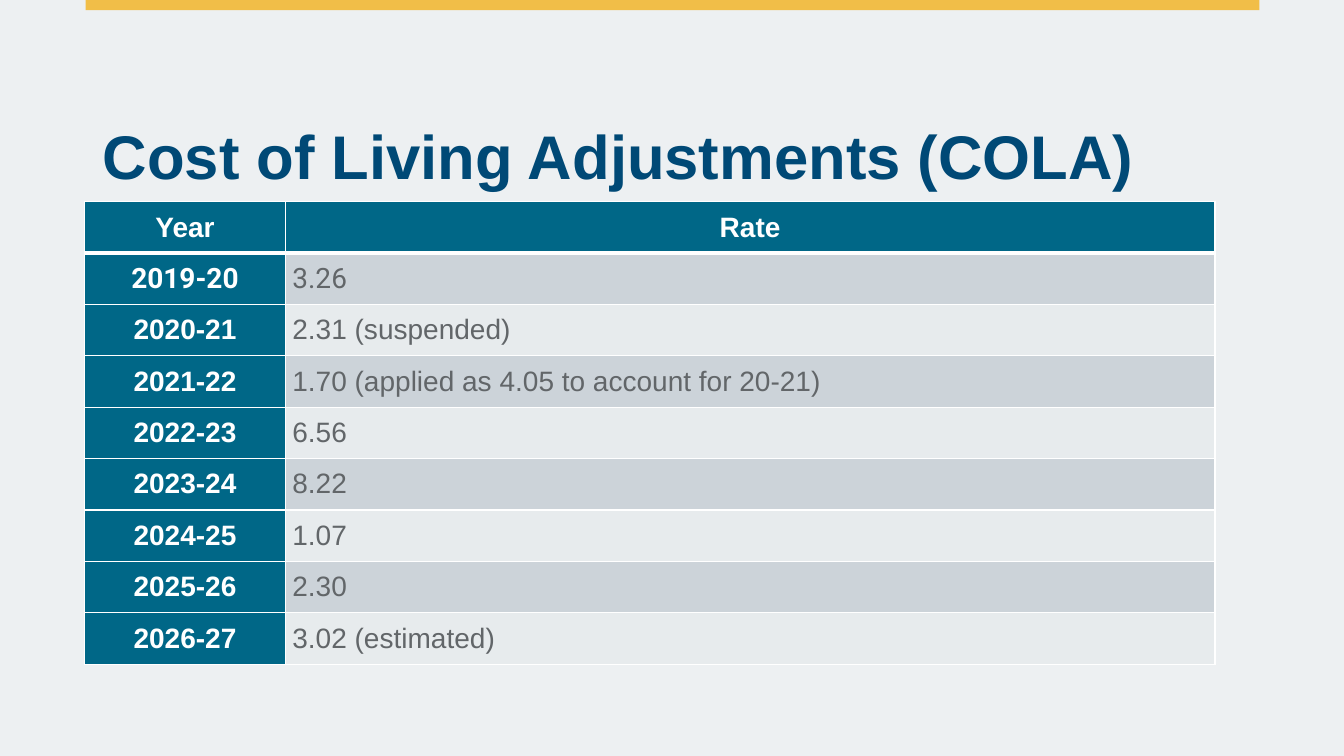
from lxml import etree
from pptx import Presentation
from pptx import util as u
from pptx.dml.color import RGBColor
from pptx.enum import shapes, text
from pptx.oxml import ns

PX = 9144  # 100 px to the inch
THEME = {
    "background": RGBColor.from_string("EDF0F2"),
    "accent": RGBColor.from_string("F1BE48"),
    "title": RGBColor.from_string("004976"),
    "head": RGBColor.from_string("006787"),
    "bands": [RGBColor.from_string("CCD3D9"), RGBColor.from_string("E7EBED")],
    "rate": RGBColor.from_string("626669"),
    "white": RGBColor.from_string("FFFFFF"),
    "title_size": u.Pt(44),
    "cell_size": u.Pt(20),
    "font": "Arial",
    "first_row_font": "Roboto",
}
RATES = [
    ("Year", "Rate"),
    ("2019-20", "3.26"),
    ("2020-21", "2.31 (suspended)"),
    ("2021-22", "1.70 (applied as 4.05 to account for 20-21)"),
    ("2022-23", "6.56"),
    ("2023-24", "8.22"),
    ("2024-25", "1.07"),
    ("2025-26", "2.30"),
    ("2026-27", "3.02 (estimated)"),
]
ROW_HEIGHT = 51
COLUMN_WIDTHS = [199, 922]


def set_format(target, values):
    """Set each named attribute of target."""
    for name, value in values.items():
        setattr(target, name, value)


def add_border(cell, side, points):
    """Draw a white line on one side: L, R, T or B, in that order."""
    line = etree.SubElement(cell._tc.get_or_add_tcPr(), ns.qn(f"a:ln{side}"), w=str(u.Pt(points)))
    fill = etree.SubElement(line, ns.qn("a:solidFill"))
    etree.SubElement(fill, ns.qn("a:srgbClr"), val=str(THEME["white"]))


deck = Presentation()
set_format(deck, {"slide_width": 1333 * PX, "slide_height": 750 * PX})
slide = deck.slides.add_slide(deck.slide_layouts[5])
slide.background.fill.solid()
slide.background.fill.fore_color.rgb = THEME["background"]

top_bar = slide.shapes.add_shape(shapes.MSO_SHAPE.RECTANGLE, 85 * PX, 0, 1164 * PX, 10 * PX)
top_bar.shadow.inherit = False
top_bar.fill.solid()
top_bar.fill.fore_color.rgb = THEME["accent"]
top_bar.line.fill.background()

heading = slide.shapes.title
set_format(heading, {"left": 92 * PX, "top": 40 * PX, "width": 1150 * PX, "height": 160 * PX})
set_format(heading.text_frame, {
    "text": "Cost of Living Adjustments (COLA)",
    "word_wrap": True,
    "auto_size": text.MSO_AUTO_SIZE.NONE,
    "vertical_anchor": text.MSO_ANCHOR.BOTTOM,
    "margin_left": 10 * PX, "margin_right": 10 * PX,
    "margin_top": 0, "margin_bottom": 10 * PX,
})
heading_line = heading.text_frame.paragraphs[0]
set_format(heading_line, {"alignment": text.PP_ALIGN.LEFT, "line_spacing": 0.8})
set_format(heading_line.font, {"name": THEME["font"], "size": THEME["title_size"], "bold": True})
heading_line.font.color.rgb = THEME["title"]

rate_table = slide.shapes.add_table(
    len(RATES), len(COLUMN_WIDTHS), 84 * PX, 200 * PX,
    sum(COLUMN_WIDTHS) * PX, len(RATES) * ROW_HEIGHT * PX).table
for column, width in zip(rate_table.columns, COLUMN_WIDTHS):
    column.width = width * PX

for r, entries in enumerate(RATES):
    rate_table.rows[r].height = ROW_HEIGHT * PX
    for c, entry in enumerate(entries):
        is_head = r == 0 or c == 0
        cell = rate_table.cell(r, c)
        set_format(cell, {
            "text": entry,
            "vertical_anchor": text.MSO_ANCHOR.MIDDLE,
            "margin_left": 7 * PX, "margin_right": 7 * PX,
            "margin_top": 0, "margin_bottom": 0,
        })
        borders = {"L": 1, "R": 1, "T": 3 if r == 1 else 1, "B": 3 if r == 0 else 1}
        for side, points in borders.items():
            add_border(cell, side, points)
        cell.fill.solid()
        cell.fill.fore_color.rgb = THEME["head"] if is_head else THEME["bands"][(r - 1) % 2]
        line = cell.text_frame.paragraphs[0]
        line.alignment = text.PP_ALIGN.CENTER if is_head else text.PP_ALIGN.LEFT
        set_format(line.font, {
            "name": THEME["first_row_font"] if r == 1 else THEME["font"],
            "size": THEME["cell_size"],
            "bold": is_head,
        })
        line.font.color.rgb = THEME["white"] if is_head else THEME["rate"]

deck.save("out.pptx")
